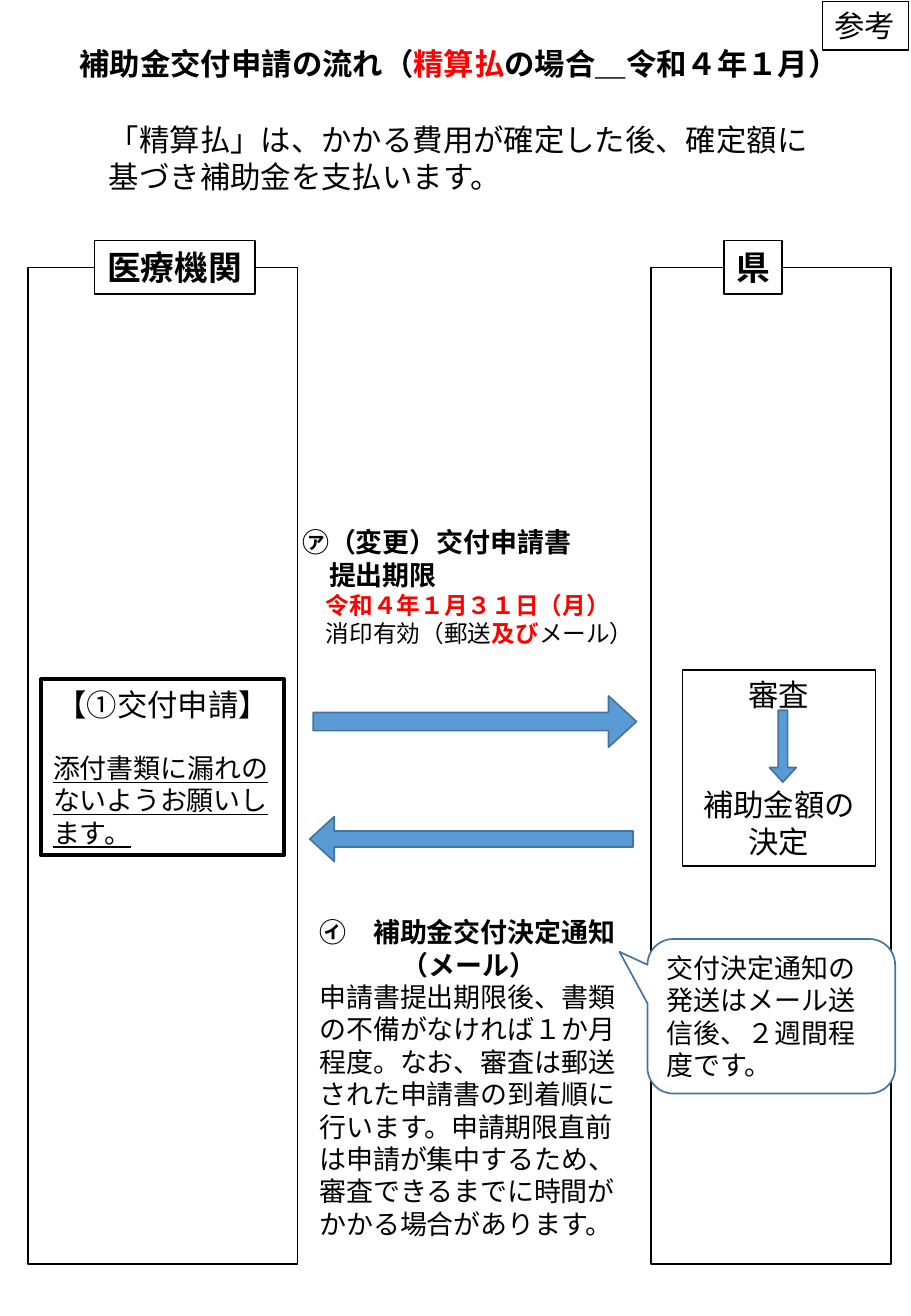
import pptx
import pptx.util
import pptx.dml.color
import pptx.enum.shapes
import pptx.enum.text

Cm, Pt = pptx.util.Cm, pptx.util.Pt
RGB = pptx.dml.color.RGBColor.from_string
KIND = pptx.enum.shapes.MSO_SHAPE
SIDE = pptx.enum.text.PP_ALIGN
EDGE = pptx.enum.text.MSO_ANCHOR
FIT = pptx.enum.text.MSO_AUTO_SIZE

THEME = {
    "font": "Calibri", "ink": "000000", "alert": "FF0000", "paper": "FFFFFF",
    "blue": "5B9BD5", "edge": "43739E",
    "head": Pt(20), "lead": Pt(18), "body": Pt(16), "note": Pt(14),
}

# Content: a paragraph is (align, space before in points, runs)
# and a run is (text, size, colour, format values)
BOLD, PLAIN, LINED = {"bold": True}, {}, {"underline": True}
MID, LEFT = SIDE.CENTER, SIDE.LEFT

TITLE = [(MID, 0, [("補助金交付申請の流れ（", "lead", "ink", BOLD),
                   ("精算払", "lead", "alert", BOLD),
                   ("の場合＿令和４年１月）", "lead", "ink", BOLD)])]
INTRO = [(LEFT, 0, [("「精算払」は、かかる費用が確定した後、確定額に基づき補助金を支払います。",
                     "lead", "ink", PLAIN)])]
MARK = [(LEFT, 0, [("参考", "lead", "ink", PLAIN)])]
CLINIC = [(MID, 0, [("医療機関", "head", "ink", BOLD)])]
OFFICE = [(MID, 0, [("県", "head", "ink", BOLD)])]
REVIEW = [(MID, 0, [("審査", "lead", "ink", PLAIN)]),
          (MID, 44, [("補助金額の決定", "lead", "ink", PLAIN)])]
APPLY = [(MID, 0, [("【①交付申請】", "lead", "ink", PLAIN)]),
         (LEFT, 17, [("添付書類に漏れのないようお願いします。", "body", "ink", LINED)])]
LIMIT = [(LEFT, 0, [("㋐（変更）交付申請書　", "body", "ink", BOLD)]),
         (LEFT, 0, [("　提出期限", "body", "ink", BOLD)]),
         (LEFT, 0, [("　", "note", "ink", PLAIN),
                    ("令和４年１月３１日（月）", "note", "alert", BOLD)]),
         (LEFT, 0, [("　消印有効（郵送", "note", "ink", PLAIN),
                    ("及び", "note", "alert", BOLD),
                    ("メール）", "note", "ink", PLAIN)])]
NOTICE = [(LEFT, 0, [("㋑　補助金交付決定通知", "body", "ink", BOLD)]),
          (MID, 0, [("（メール）", "body", "ink", BOLD)]),
          (LEFT, 0, [("申請書提出期限後、書類の不備がなければ１か月程度。なお、審査は郵送された"
                      "申請書の到着順に行います。申請期限直前は申請が集中するため、"
                      "審査できるまでに時間がかかる場合があります。", "body", "ink", PLAIN)])]
DELAY = [(LEFT, 0, [("交付決定通知の発送はメール送信後、２週間程度です。", "body", "ink", PLAIN)])]

# Looks: (fill, line, line width)
OPEN = (None, "ink", 1)
CARD = ("paper", "ink", 1)
THICK = ("paper", "ink", 2.25)
CLOUD = ("paper", "edge", 1)
ARROW = ("blue", "edge", 1)

# Text frame values
FREE = {"word_wrap": False, "auto_size": FIT.SHAPE_TO_FIT_TEXT, "vertical_anchor": EDGE.TOP}
WRAP = {**FREE, "word_wrap": True}
CORE = {**WRAP, "vertical_anchor": EDGE.MIDDLE}
FIXED = {**CORE, "auto_size": FIT.NONE}

# Places in cm: left, top, width, height
COLS = [(13.61, 5.03), (0.58, 5.64)]
TOP, TALL = 5.59, 20.83
TEXTS = [
    ((0.15, 0.81, 18.9, 1.02), TITLE),
    ((6.07, 10.87, 8, 2.82), LIMIT),
    ((6.43, 19.02, 6.76, 7.7), NOTICE),
    ((2.03, 2.41, 15.54, 1.8), INTRO),
]
CARDS = [
    ((1.98, 5.03, 3.35, 1.12), CARD, FREE, CLINIC),
    ((15.14, 5.03, 1.22, 1.12), CARD, FREE, OFFICE),
    ((14.27, 14, 4.04, 4.11), CARD, WRAP, REVIEW),
    ((17.2, 0.03, 1.8, 1.02), CARD, FREE, MARK),
    ((0.86, 14.2, 5.08, 3.68), THICK, CORE, APPLY),
]
ARROWS = [  # place, turn in degrees, mirrored
    ((6.48, 17.07, 6.76, 0.94), 0, True),
    ((6.55, 14.55, 6.76, 1.07), 0, False),
    ((15.62, 15.32, 1.5, 0.56), 90, False),
]
BARB = (0.354, 0.544)
TAIL = (-0.613, -0.417, 0.167)


def apply(item, values):
    for name, value in values.items():
        setattr(item, name, value)


def write(shape, frame, paras):
    area = shape.text_frame
    apply(area, frame)
    for num, (side, gap, runs) in enumerate(paras):
        para = area.add_paragraph() if num else area.paragraphs[0]
        apply(para, {"alignment": side, "space_before": Pt(gap)})
        for text, size, tint, style in runs:
            run = para.add_run()
            run.text = text
            apply(run.font, {"name": THEME["font"], "size": THEME[size], **style})
            run.font.color.rgb = RGB(THEME[tint])


def draw(slide, kind, place, look, bends=()):
    fill, line, width = look
    shape = slide.shapes.add_shape(kind, *map(Cm, place))
    shape.shadow.inherit = False
    if fill:
        shape.fill.solid()
        shape.fill.fore_color.rgb = RGB(THEME[fill])
    else:
        shape.fill.background()
    shape.line.color.rgb = RGB(THEME[line])
    shape.line.width = Pt(width)
    for num, bend in enumerate(bends):
        shape.adjustments[num] = bend
    return shape


def main():
    deck = pptx.Presentation()
    apply(deck, {"slide_width": Cm(19.05), "slide_height": Cm(27.51)})
    slide = deck.slides.add_slide(deck.slide_layouts[6])

    # Columns of the two parties
    for left, wide in COLS:
        draw(slide, KIND.RECTANGLE, (left, TOP, wide, TALL), OPEN)

    # Plain text
    for place, paras in TEXTS:
        write(slide.shapes.add_textbox(*map(Cm, place)), WRAP, paras)

    # Framed labels and steps
    for place, look, frame, paras in CARDS:
        write(draw(slide, KIND.RECTANGLE, place, look), frame, paras)

    # Arrows
    for place, turn, flip in ARROWS:
        arrow = draw(slide, KIND.RIGHT_ARROW, place, ARROW, BARB)
        arrow.rotation = turn
        if flip:
            arrow.element.spPr.xfrm.set("flipH", "1")

    # Callout on the notice
    cloud = draw(slide, KIND.ROUNDED_RECTANGULAR_CALLOUT,
                 (13.54, 19.63, 5.18, 3.23), CLOUD, TAIL)
    write(cloud, FIXED, DELAY)

    deck.save("out.pptx")


if __name__ == "__main__":
    main()
